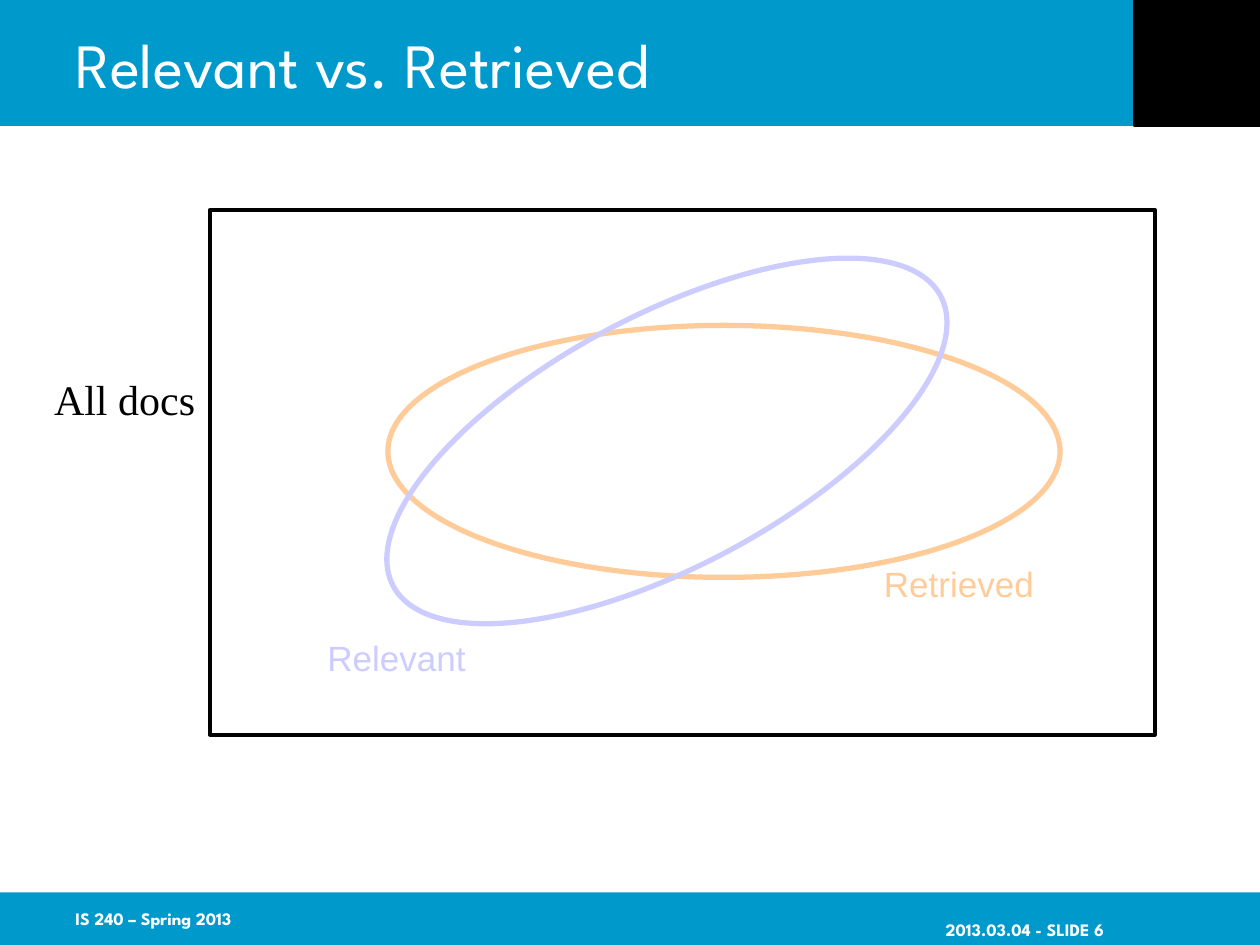
from dataclasses import dataclass

from pptx import Presentation
from pptx.dml.color import RGBColor
from pptx.enum.shapes import MSO_SHAPE as Shape
from pptx.enum.text import MSO_ANCHOR as Anchor, PP_ALIGN as Align
from pptx.util import Cm, Pt


@dataclass(frozen=True)
class Theme:
    blue: str = "0099CC"
    black: str = "000000"
    white: str = "FFFFFF"
    relevant: str = "CCCCFF"
    retrieved: str = "FFCC99"
    brand_font: str = "League Spartan"
    label_font: str = "Arial"
    docs_font: str = "Times New Roman"
    title_size: int = 36
    docs_size: int = 24
    label_size: int = 20
    footer_size: int = 10


T = Theme()
prs = Presentation()
prs.slide_width, prs.slide_height = Cm(25.4), Cm(19.05)
s = prs.slides.add_slide(prs.slide_layouts[6])


def add_shape(kind, box, fill=None, line=None, width=0.75):
    sp = s.shapes.add_shape(kind, *map(Cm, box))
    sp.shadow.inherit = False
    if fill:
        sp.fill.solid()
        sp.fill.fore_color.rgb = RGBColor.from_string(fill)
    else:
        sp.fill.background()
    if line:
        sp.line.color.rgb = RGBColor.from_string(line)
        sp.line.width = Pt(width)
    else:
        sp.line.fill.background()
    return sp


def add_text(text, box, font, size, color, bold=False, wrap=True, anchor=Anchor.TOP):
    tf = s.shapes.add_textbox(*map(Cm, box)).text_frame
    tf.word_wrap = wrap
    tf.vertical_anchor = anchor
    tf.text = text
    f = tf.paragraphs[0].runs[0].font
    f.name, f.size, f.bold = font, Pt(size), bold
    f.color.rgb = RGBColor.from_string(color)
    return tf


# Header and footer bands
add_shape(Shape.RECTANGLE, (0, 0, 25.4, 2.54), T.blue)
add_shape(Shape.RECTANGLE, (0, 17.99, 25.4, 1.06), T.blue)
add_shape(Shape.RECTANGLE, (22.86, 0, 2.54, 2.54), T.black, T.black)
add_text("Relevant vs. Retrieved", (1.27, 0, 21.59, 2.54), T.brand_font,
         T.title_size, T.white, anchor=Anchor.MIDDLE)

add_text("IS 240 – Spring 2013", (1.27, 17.99, 5.28, 1.06), T.brand_font,
         T.footer_size, T.white, bold=True, anchor=Anchor.MIDDLE)
tf = add_text("2013.03.04 - SLIDE 6", (16.97, 18.21, 5.28, 1.06), T.brand_font,
              T.footer_size, T.white, bold=True, anchor=Anchor.MIDDLE)
tf.paragraphs[0].alignment = Align.RIGHT
tf.margin_left = 0
tf.margin_right = Cm(0)
tf.margin_right = Cm(22.25 - 22.26 + 0.01)

# Venn diagram of the collection
add_shape(Shape.OVAL, (7.82, 6.56, 13.55, 5.08), line=T.retrieved, width=3)
relevant = add_shape(Shape.OVAL, (7.2, 6.35, 12.49, 5.08), line=T.relevant, width=3)
relevant.rotation = 332.1
add_text("Relevant", (6.35, 12.7, 3.3, 1.09), T.label_font,
         T.label_size, T.relevant, wrap=False)
add_text("Retrieved", (17.57, 11.22, 4.39, 1.09), T.label_font,
         T.label_size, T.retrieved)
add_shape(Shape.RECTANGLE, (4.23, 4.23, 19.05, 10.58), line=T.black, width=2.25)
add_text("All docs", (0.84, 7.41, 3.35, 1.27), T.docs_font,
         T.docs_size, T.black, wrap=False)

prs.save("out.pptx")
